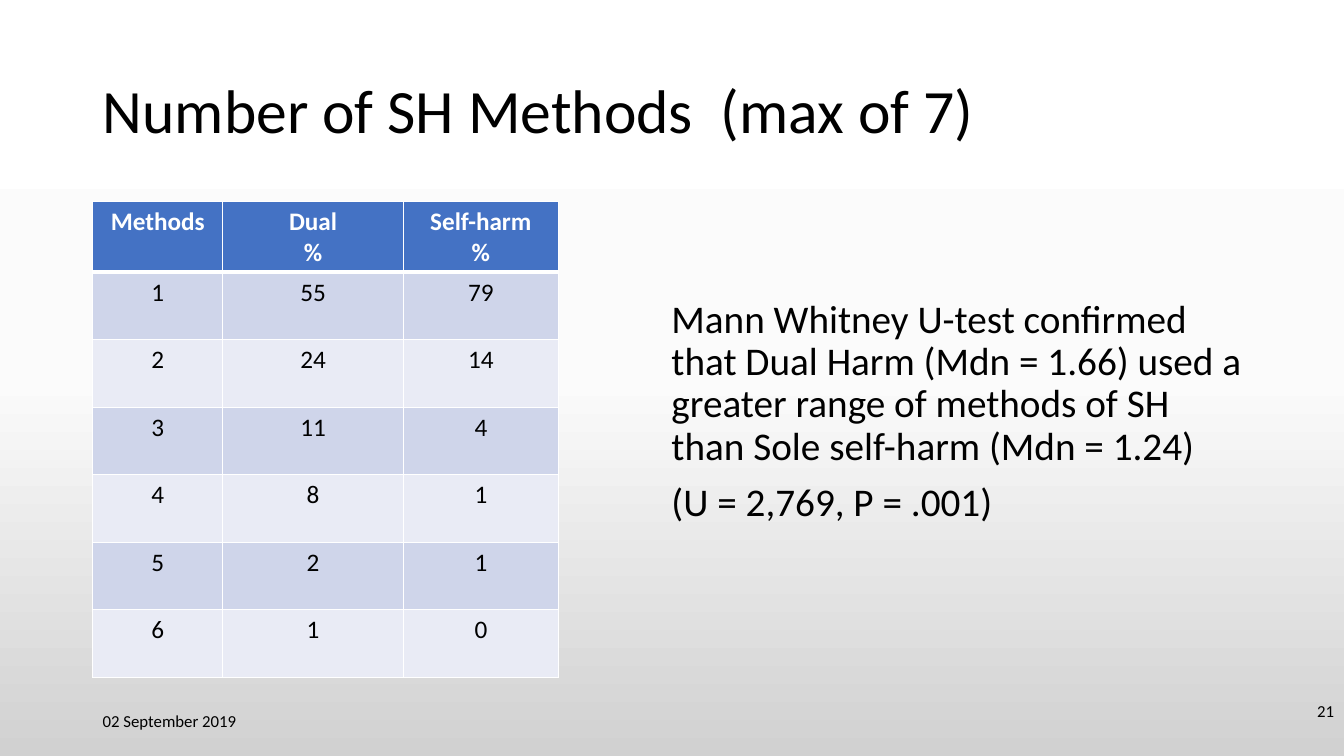
from copy import deepcopy

from lxml import etree
from pptx import Presentation
from pptx.dml.color import RGBColor
from pptx.enum import text
from pptx.oxml import ns
from pptx.util import Inches, Pt

COLORS = {
    "text": "000000",
    "white": "FFFFFF",
    "header": "4472C4",
    "band_dark": "CFD5EA",
    "band_light": "E9EBF5",
}
BACKGROUND_STOPS = [(0, "FFFFFF"), (0.5, "FBFBFB"), (1, "D1D1D1")]
FONT = "Calibri"

HEADINGS = ["Methods", "Dual\n%", "Self-harm\n%"]
METHOD_SHARES = [(1, 55, 79), (2, 24, 14), (3, 11, 4), (4, 8, 1), (5, 2, 1), (6, 1, 0)]
COLUMN_WIDTHS = [1.29, 1.79, 1.54]
ROW_HEIGHT = 0.67

FINDINGS = (
    "Mann Whitney U-test confirmed that Dual Harm (Mdn = 1.66) used a "
    "greater range of methods of SH than Sole self-harm (Mdn = 1.24)\n"
    "(U = 2,769, P = .001)"
)


def rgb(name):
    return RGBColor.from_string(COLORS[name])


def write(frame, words, size, color="text", align=text.PP_ALIGN.LEFT, bold=False):
    frame.text = words
    frame.word_wrap = True
    for paragraph in frame.paragraphs:
        paragraph.alignment = align
        font = paragraph.font
        font.name, font.size, font.bold = FONT, Pt(size), bold
        font.color.rgb = rgb(color)


def fill_placeholder(holder, box, words, size, anchor, space_before=0):
    holder.left, holder.top, holder.width, holder.height = map(Inches, box)
    frame = holder.text_frame
    write(frame, words, size)
    frame.auto_size = text.MSO_AUTO_SIZE.NONE
    frame.vertical_anchor = anchor
    for paragraph in frame.paragraphs:
        paragraph.line_spacing = 0.9
        paragraph.space_before = Pt(space_before)


def remove_bullets(frame):
    for paragraph in frame.paragraphs:
        properties = paragraph._p.get_or_add_pPr()
        properties.set("marL", "0")
        properties.set("indent", "0")
        properties.insert_element_before(
            properties.makeelement(ns.qn("a:buNone")), "a:tabLst", "a:defRPr", "a:extLst"
        )


def add_footer(slide, box, words, align=text.PP_ALIGN.LEFT):
    frame = slide.shapes.add_textbox(*map(Inches, box)).text_frame
    write(frame, words, 12, align=align)
    frame.vertical_anchor = text.MSO_ANCHOR.MIDDLE


def paint_background(slide):
    fill = slide.background.fill
    fill.gradient()
    fill.gradient_angle = 270
    stop_list = slide.element.find(".//" + ns.qn("a:gsLst"))
    stop_list.append(deepcopy(stop_list[-1]))
    for stop, (position, color) in zip(fill.gradient_stops, BACKGROUND_STOPS):
        stop.position = position
        stop.color.rgb = RGBColor.from_string(color)


def add_borders(cell, bottom_width):
    properties = cell._tc.get_or_add_tcPr()
    for side, width in (("L", 1), ("R", 1), ("T", 1), ("B", bottom_width)):
        line = etree.SubElement(properties, ns.qn(f"a:ln{side}"), w=str(Pt(width)))
        solid = etree.SubElement(line, ns.qn("a:solidFill"))
        etree.SubElement(solid, ns.qn("a:srgbClr"), val=COLORS["white"])


def add_methods_table(slide):
    rows = [HEADINGS, *METHOD_SHARES]
    table = slide.shapes.add_table(
        len(rows), len(HEADINGS), Inches(0.92), Inches(2),
        Inches(sum(COLUMN_WIDTHS)), Inches(ROW_HEIGHT * len(rows)),
    ).table
    for column, width in zip(table.columns, COLUMN_WIDTHS):
        column.width = Inches(width)
    for r, values in enumerate(rows):
        table.rows[r].height = Inches(ROW_HEIGHT)
        is_header = r == 0
        band = "header" if is_header else ("band_light", "band_dark")[r % 2]
        for c, value in enumerate(values):
            cell = table.cell(r, c)
            write(cell.text_frame, str(value), 18, "white" if is_header else "text",
                  text.PP_ALIGN.CENTER, is_header)
            # The header's bottom rule is shared with the first data row
            add_borders(cell, 3 if is_header else 1)
            if r == 1:
                cell._tc.tcPr.find(ns.qn("a:lnT")).set("w", str(Pt(3)))
            cell.fill.solid()
            cell.fill.fore_color.rgb = rgb(band)


def main():
    deck = Presentation()
    deck.slide_width, deck.slide_height = Inches(13.33), Inches(7.5)
    slide = deck.slides.add_slide(deck.slide_layouts[1])
    paint_background(slide)

    # Title and findings
    fill_placeholder(slide.shapes.title, (0.92, 0.4, 11.5, 1.45),
                     "Number of SH Methods  (max of 7)", 44, text.MSO_ANCHOR.MIDDLE)
    findings = slide.placeholders[1]
    fill_placeholder(findings, (6.56, 2.92, 5.94, 3.16), FINDINGS, 28,
                     text.MSO_ANCHOR.TOP, space_before=10)
    remove_bullets(findings.text_frame)

    # Footer
    add_footer(slide, (0.92, 6.95, 3, 0.4), "02 September 2019")
    add_footer(slide, (10.22, 6.79, 3.11, 0.52), "21", text.PP_ALIGN.RIGHT)

    # Share of people by number of methods
    add_methods_table(slide)

    deck.save("out.pptx")


if __name__ == "__main__":
    main()
